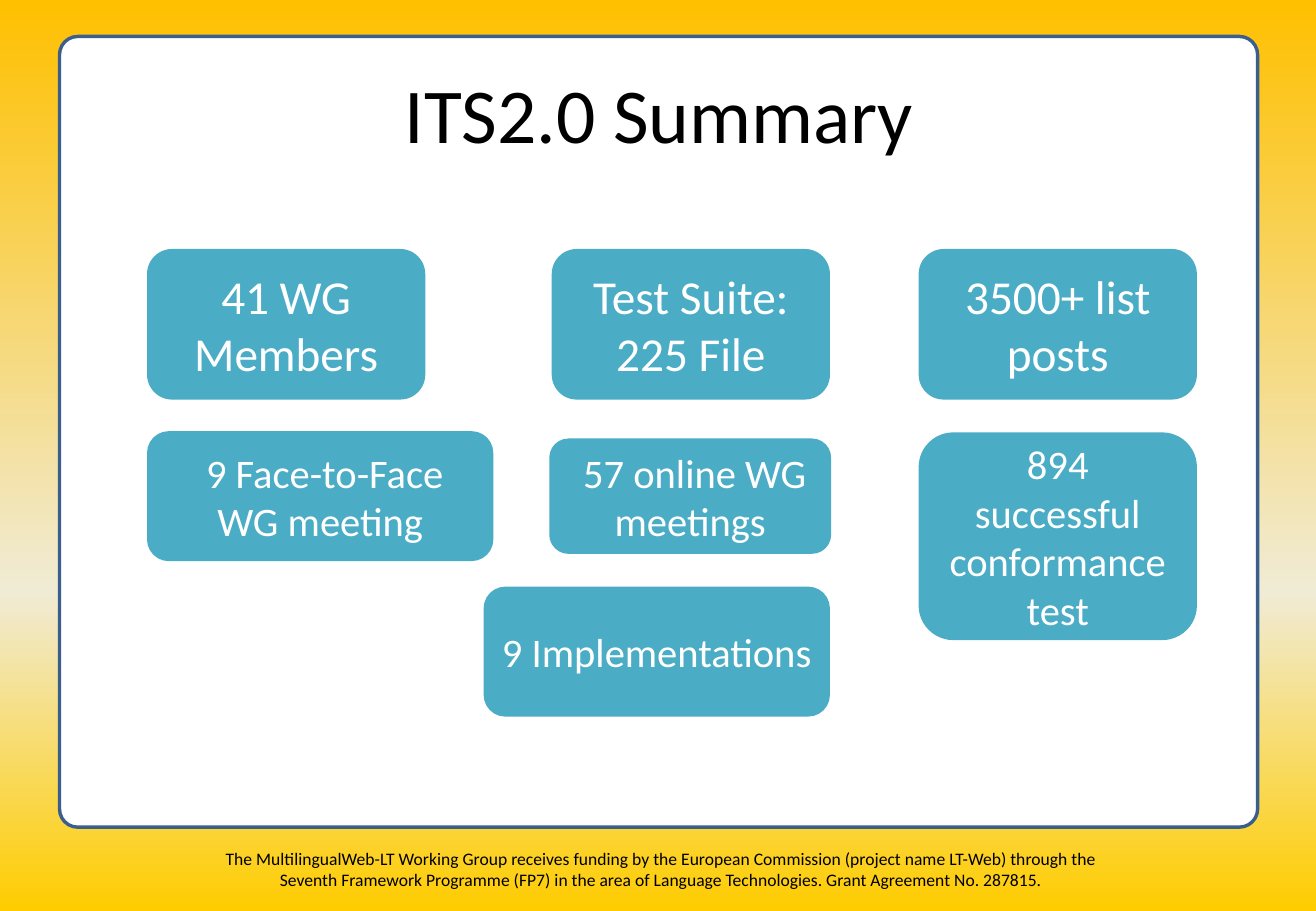
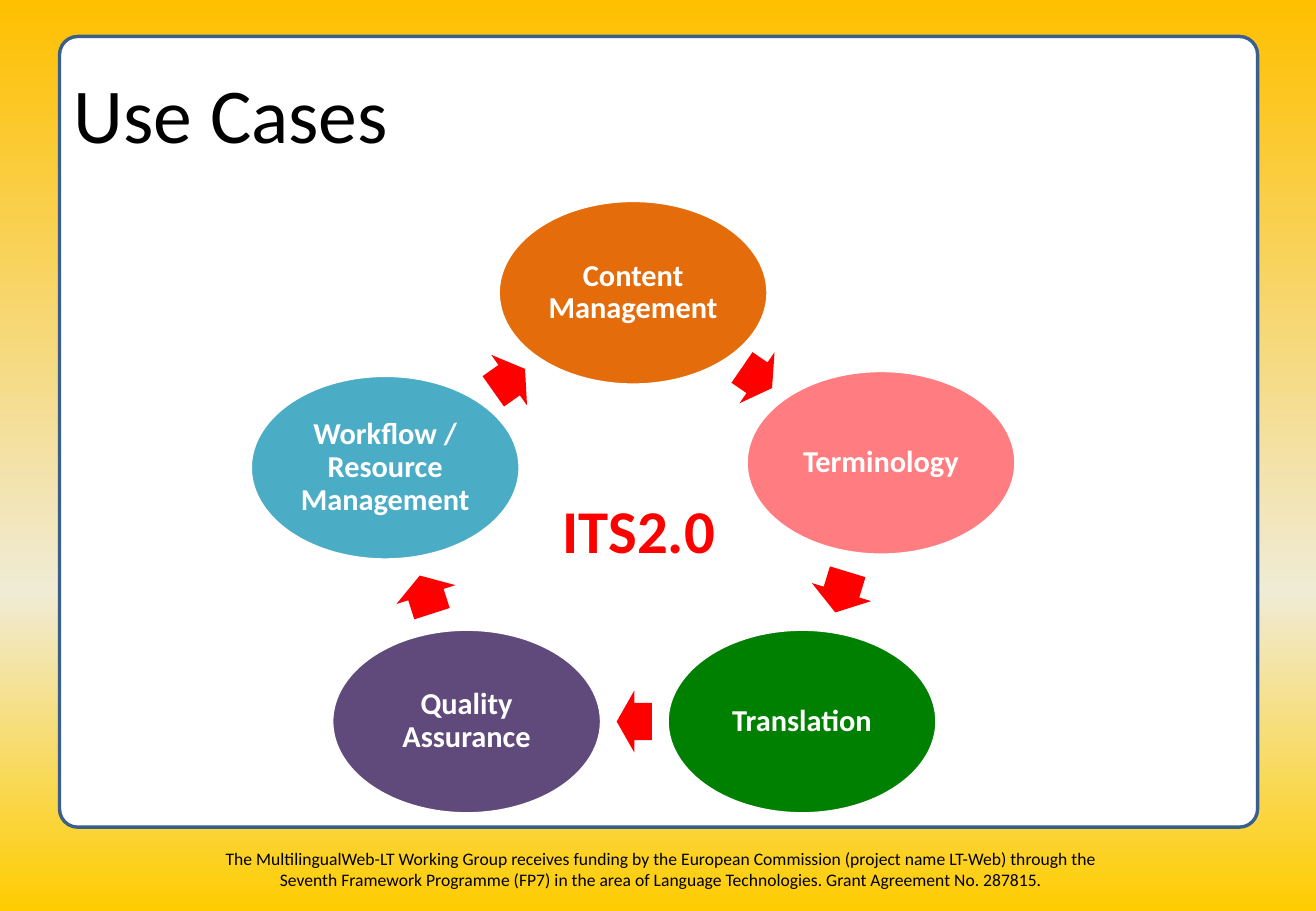
import copy
import math

from pptx import Presentation
from pptx.dml.color import RGBColor
from pptx.enum import shapes, text
from pptx.oxml.ns import qn
from pptx.util import Inches, Pt

FONT = "Calibri"
WHITE, BLACK, RED, TEAL = "FFFFFF", "000000", "FF0000", "4BACC6"
PANEL_LINE = "3A5F8C"
BACKGROUND = [(0, "FFC000"), (0.65, "F0EBD5"), (1, "FFCC00")]
FUNDING = ("The MultilingualWeb-LT Working Group receives funding by the European "
           "Commission (project name LT-Web) through the Seventh Framework Programme "
           "(FP7) in the area of Language Technologies. Grant Agreement No. 287815.")
LEFT, CENTER = text.PP_ALIGN.LEFT, text.PP_ALIGN.CENTER
MIDDLE = text.MSO_ANCHOR.MIDDLE
SHAPE = shapes.MSO_SHAPE


def rgb(value):
    return RGBColor.from_string(value)


class Deck:
    def __init__(self):
        self.prs = Presentation()
        self.prs.slide_width, self.prs.slide_height = Inches(10.83), Inches(7.5)
        self.slide = None

    def new_slide(self, title, align):
        """Start a slide with the shared background, panel, funding note and title."""
        self.slide = self.prs.slides.add_slide(self.prs.slide_layouts[6])
        self.paint_background()
        panel = self.shape(SHAPE.ROUNDED_RECTANGLE, (0.49, 0.3, 9.86, 6.51), WHITE, PANEL_LINE)
        panel.adjustments[0] = 0.023
        self.label((1.62, 6.93, 7.64, 0.4), FUNDING, 10.4, align=CENTER)
        heading = self.label((0.51, 0.3, 9.83, 1.25), title, 46, align=align)
        heading.text_frame.vertical_anchor = MIDDLE

    def paint_background(self):
        fill = self.slide.background.fill
        fill.gradient()
        fill.gradient_angle = 270
        stop_list = self.slide.element.find(".//" + qn("a:gsLst"))
        stop_list.append(copy.deepcopy(stop_list[-1]))
        for stop, (position, color) in zip(fill.gradient_stops, BACKGROUND):
            stop.position = position
            stop.color.rgb = rgb(color)

    def shape(self, kind, box, fill, line=None):
        item = self.slide.shapes.add_shape(kind, *map(Inches, box))
        item.shadow.inherit = False
        item.fill.solid()
        item.fill.fore_color.rgb = rgb(fill)
        if line:
            item.line.color.rgb = rgb(line)
            item.line.width = Pt(2)
        else:
            item.line.fill.background()
        return item

    def set_text(self, item, words, size, color, align, bold=False, wrap=True):
        frame = item.text_frame
        frame.word_wrap = wrap
        frame.text = words
        paragraph = frame.paragraphs[0]
        paragraph.alignment = align
        font = paragraph.runs[0].font
        font.name, font.size, font.bold = FONT, Pt(size), bold
        font.color.rgb = rgb(color)

    def label(self, box, words, size, color=BLACK, align=LEFT, **style):
        item = self.slide.shapes.add_textbox(*map(Inches, box))
        self.set_text(item, words, size, color, align, **style)
        return item

    def card(self, box, words, size):
        item = self.shape(SHAPE.ROUNDED_RECTANGLE, box, TEAL)
        item.text_frame.vertical_anchor = MIDDLE
        self.set_text(item, words, size, WHITE, CENTER)

    def stage(self, center, words, color):
        """Add one ellipse of the cycle around its centre."""
        width, height = 2.22, 1.52
        x, y = center
        box = (x - width / 2, y - height / 2, width, height)
        item = self.shape(SHAPE.OVAL, box, color, WHITE)
        frame = item.text_frame
        frame.vertical_anchor = MIDDLE
        frame.margin_left = frame.margin_right = Inches(0.03)
        frame.margin_top = frame.margin_bottom = Inches(0.03)
        self.set_text(item, words, 18, WHITE, CENTER, bold=True)
        frame.paragraphs[0].line_spacing = 0.9

    def step(self, start, end, length):
        """Add a block arrow halfway between two centres, pointing at the second."""
        height = 0.51
        (x1, y1), (x2, y2) = start, end
        box = ((x1 + x2 - length) / 2, (y1 + y2 - height) / 2, length, height)
        arrow = self.shape(SHAPE.RIGHT_ARROW, box, RED)
        arrow.adjustments[0], arrow.adjustments[1] = 0.6, 0.5
        arrow.rotation = math.degrees(math.atan2(y2 - y1, x2 - x1)) % 360


def summary_slide(deck):
    deck.new_slide("ITS2.0 Summary", CENTER)
    top_row = [(1.21, "41 WG Members"), (4.54, "Test Suite: 225 File"),
               (7.56, "3500+ list posts")]
    for left, words in top_row:
        deck.card((left, 2.05, 2.29, 1.24), words, 28)
    lower_cards = [
        ((1.21, 3.55, 2.85, 1.07), " 9 Face-to-Face WG meeting"),
        ((4.52, 3.61, 2.32, 0.95), " 57 online WG meetings"),
        ((7.56, 3.56, 2.29, 1.71), "894 successful conformance test"),
        ((3.98, 4.83, 2.85, 1.07), "9 Implementations"),
    ]
    for box, words in lower_cards:
        deck.card(box, words, 24)


def use_cases_slide(deck):
    deck.new_slide("Use Cases", LEFT)
    # Centre, name, colour and length of the arrow to the next stage
    cycle = [
        ((5.21, 2.41), "Content Management", "E46C0A", 0.3),
        ((7.25, 3.81), "Terminology", "FF7C80", 0.35),
        ((6.6, 5.94), "Translation", "008000", 0.29),
        ((3.84, 5.94), "Quality Assurance", "604A7B", 0.33),
        ((3.17, 3.85), "Workflow / Resource Management", TEAL, 0.32),
    ]
    for current, following in zip(cycle, cycle[1:] + cycle[:1]):
        center, words, color, arrow_length = current
        deck.stage(center, words, color)
        deck.step(center, following[0], arrow_length)
    deck.label((4.53, 4.01, 1.47, 0.71), "ITS2.0", 36, RED, bold=True, wrap=False)


def main():
    deck = Deck()
    summary_slide(deck)
    use_cases_slide(deck)
    deck.prs.save("out.pptx")


if __name__ == "__main__":
    main()
